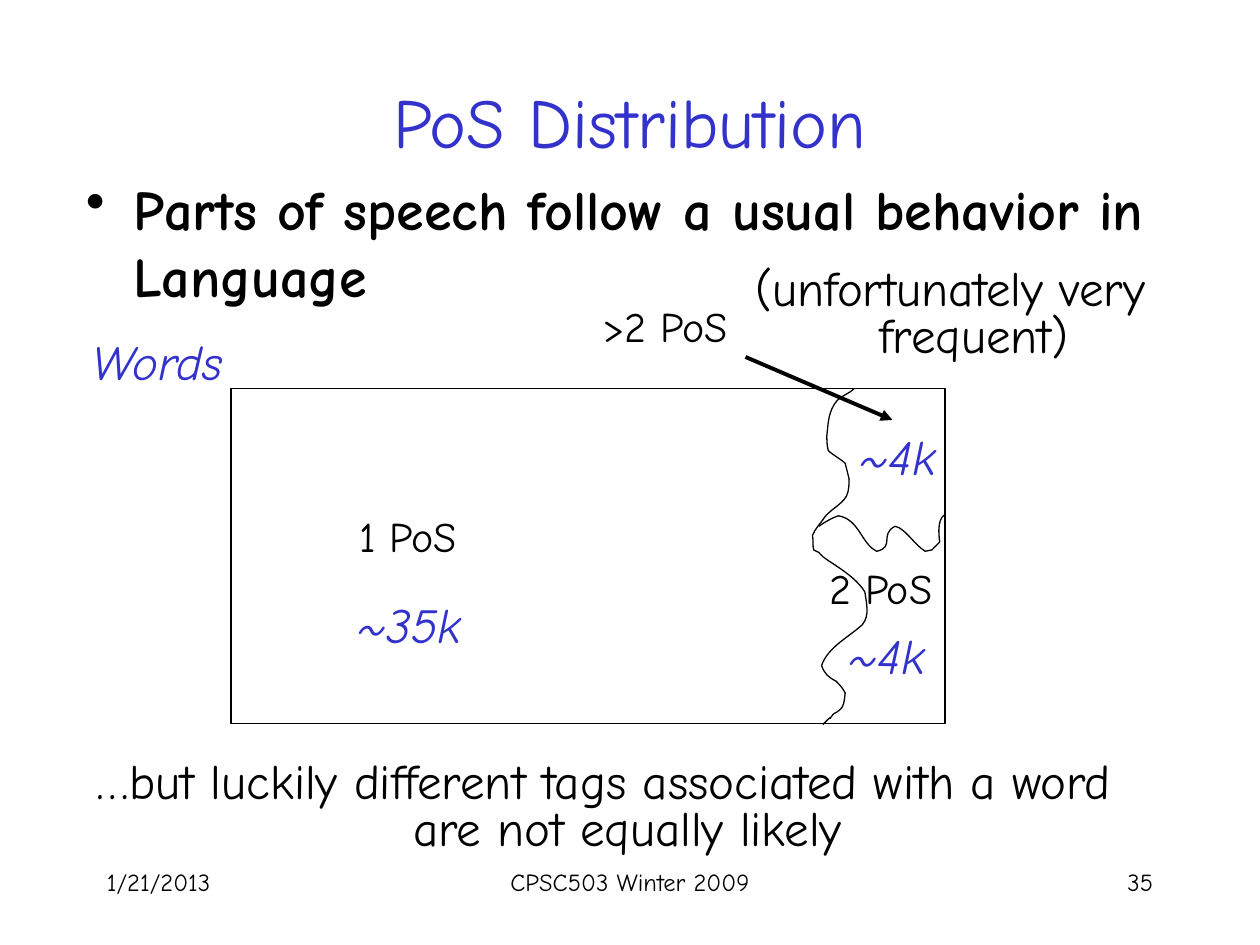
from dataclasses import dataclass

from lxml import etree
from pptx import Presentation
from pptx import util as u
from pptx.dml.color import RGBColor
from pptx.enum import shapes, text
from pptx.oxml.ns import qn

PX = 9525
FONT = "Comic Neue"
BLACK, BLUE = "000000", "3333CC"
MID, LEFT, RIGHT = text.PP_ALIGN.CENTER, text.PP_ALIGN.LEFT, text.PP_ALIGN.RIGHT


@dataclass
class Label:
    """A text box with one paragraph."""
    words: str
    box: tuple[int, int, int, int]
    size: int
    color: str = BLACK
    align: text.PP_ALIGN = MID
    hang: bool = True
    tight: bool = False
    bold: bool = False
    slant: bool = False
    bullet: bool = False
    anchor: text.MSO_ANCHOR = text.MSO_ANCHOR.TOP


FRAME = [
    Label("1/21/2013", (72, 656, 200, 48), 14, align=LEFT, hang=False),
    Label("CPSC503 Winter 2009", (328, 656, 304, 48), 14, hang=False),
    Label("35", (688, 656, 200, 48), 14, align=RIGHT, hang=False),
    Label("PoS Distribution", (72, 32, 816, 120), 40, BLUE, hang=False,
          anchor=text.MSO_ANCHOR.MIDDLE),
    Label("Parts of speech follow a usual behavior in Language",
          (56, 128, 880, 128), 32, align=LEFT, bold=True, bullet=True),
]
NAMES = [
    Label("Words", (24, 248, 192, 64), 28, BLUE, slant=True),
    Label("1 PoS", (224, 384, 174, 53), 24),
    Label("2 PoS", (584, 424, 174, 53), 24),
    Label("(unfortunately very frequent)", (552, 200, 344, 88), 28, tight=True),
    Label(">2 PoS ", (336, 232, 352, 64), 24, tight=True),
]
NOTES = [
    Label("…but luckily different tags associated with a word are not equally likely",
          (40, 576, 840, 88), 28, tight=True),
    Label("~35k", (216, 448, 192, 64), 28, BLUE, slant=True),
    Label("~4k", (624, 472, 104, 64), 28, BLUE, slant=True),
    Label("~4k", (632, 320, 104, 64), 28, BLUE, slant=True),
]

SPLIT = [
    (651, 296), (647, 300), (642, 301), (638, 305), (631, 313), (631, 323), (630, 332),
    (630, 335), (630, 339), (631, 343), (632, 345), (641, 350), (644, 353),
    (645, 357), (646, 361), (647, 365), (647, 368), (647, 374), (645, 378),
    (641, 385), (631, 389), (627, 396), (625, 399), (621, 403), (619, 408),
    (620, 412), (619, 416), (620, 419), (621, 420), (623, 420), (624, 421),
    (628, 426), (633, 428), (637, 431), (646, 437), (654, 443), (659, 451),
    (660, 459), (663, 469), (657, 476), (646, 486), (631, 493), (626, 507),
    (628, 513), (631, 516), (637, 519), (640, 522), (642, 524), (644, 528),
    (643, 537), (643, 540), (635, 544), (629, 552), (636, 543), (630, 549),
    (629, 550), (627, 552), (627, 552),
]
WAVE = [
    (624, 401), (628, 398), (635, 394), (639, 393), (655, 396), (656, 414), (668, 420),
    (682, 417), (670, 407), (682, 401), (683, 402), (684, 401), (685, 402),
    (693, 407), (697, 415), (705, 420), (707, 419), (708, 420), (710, 419),
    (712, 417), (716, 413), (716, 413), (716, 412), (713, 396), (720, 392),
]


def rgb(code: str) -> RGBColor:
    """Turn a hex string into a colour."""
    return RGBColor.from_string(code)


def scale(*nums: int) -> list[u.Emu]:
    """Turn px into EMU."""
    return [u.Emu(n * PX) for n in nums]


def write(slide, item: Label) -> None:
    """Draw one label."""
    frame = slide.shapes.add_textbox(*scale(*item.box)).text_frame
    frame.word_wrap = True
    frame.vertical_anchor = item.anchor
    para = frame.paragraphs[0]
    para.text = item.words
    para.alignment = item.align
    font = para.font
    font.name, font.size = FONT, u.Pt(item.size)
    font.bold, font.italic = item.bold, item.slant
    font.color.rgb = rgb(item.color)
    if item.tight:
        para.line_spacing = 0.8
    if item.hang:
        para.space_before = u.Pt(item.size * 0.2)
        props = para._p.get_or_add_pPr()
        inset = scale(36)[0]
        props.set("marL", str(inset))
        props.set("indent", str(-inset))
        if item.bullet:
            last = props.find(qn("a:defRPr"))
            last.addprevious(etree.Element(qn("a:buFontTx")))
            last.addprevious(etree.Element(qn("a:buChar"), char="•"))


def edge(shape) -> None:
    """Give a shape a thin black outline only."""
    shape.shadow.inherit = False
    shape.fill.background()
    shape.line.color.rgb = rgb(BLACK)
    shape.line.width = u.Pt(0.75)


def curve(slide, knots: list[tuple[int, int]]) -> None:
    """Draw an open chain of cubic curves."""
    pen = slide.shapes.build_freeform(*knots[0], scale=PX)
    pen.add_line_segments(knots[1:], close=False)
    shape = pen.convert_to_shape()
    edge(shape)
    lines = list(shape._element.iter(qn("a:lnTo")))
    for i in range(0, len(lines), 3):
        bend = etree.Element(qn("a:cubicBezTo"))
        lines[i].addprevious(bend)
        for line in lines[i:i + 3]:
            bend.append(line[0])
            line.getparent().remove(line)


def arrow(slide, ends: tuple[int, int, int, int]) -> None:
    """Draw a line with a head at its end."""
    link = slide.shapes.add_connector(shapes.MSO_CONNECTOR.STRAIGHT, *scale(*ends))
    link.line.color.rgb = rgb(BLACK)
    link.line.width = u.Pt(2.25)
    etree.SubElement(link.line._get_or_add_ln(), qn("a:tailEnd"), type="triangle")
    etree.SubElement(link._element.spPr, qn("a:effectLst"))


def main() -> None:
    """Build the slide and save it."""
    deck = Presentation()
    deck.slide_width, deck.slide_height = scale(960, 720)
    slide = deck.slides.add_slide(deck.slide_layouts[6])
    for item in FRAME:
        write(slide, item)
    edge(slide.shapes.add_shape(shapes.MSO_SHAPE.RECTANGLE, *scale(176, 296, 544, 255)))
    for knots in (SPLIT, WAVE):
        curve(slide, knots)
    for item in NAMES:
        write(slide, item)
    arrow(slide, (568, 272, 680, 320))
    for item in NOTES:
        write(slide, item)
    deck.save("out.pptx")


if __name__ == "__main__":
    main()
